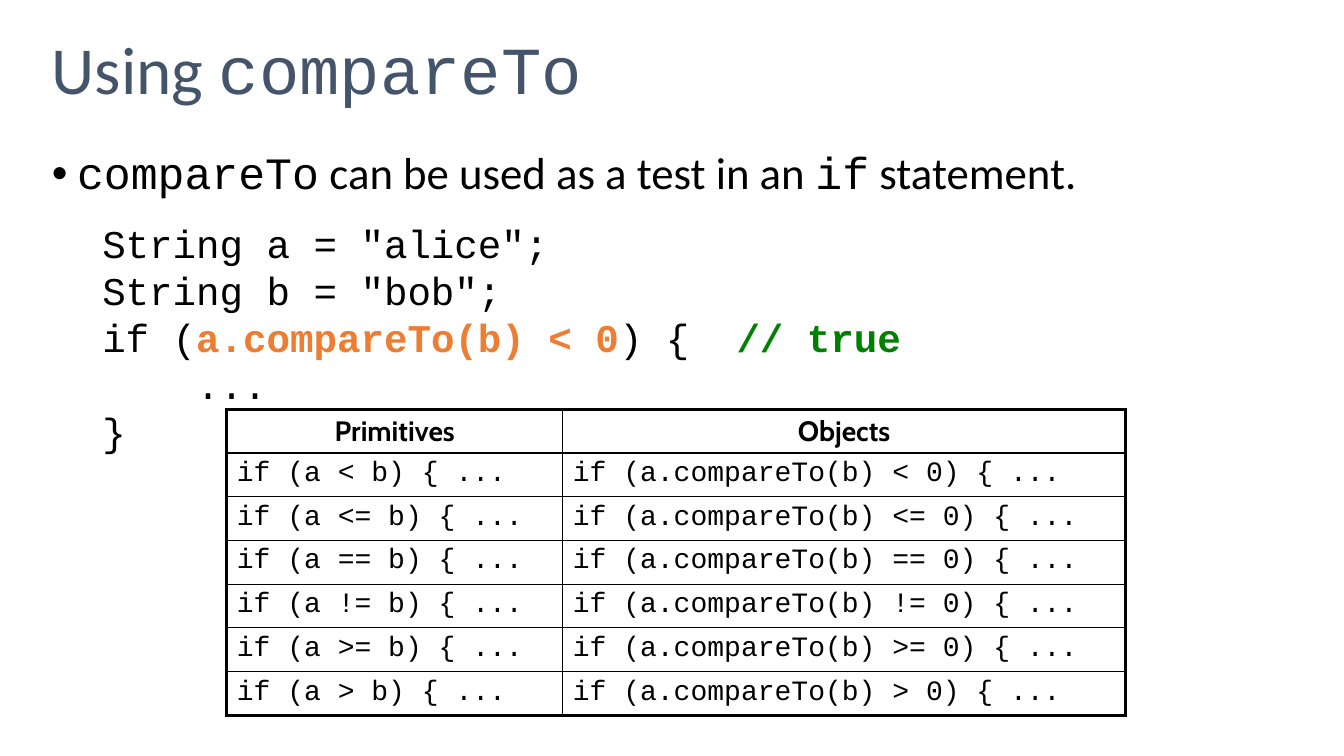
from dataclasses import dataclass

from lxml.etree import SubElement
from pptx import Presentation
from pptx.dml.color import RGBColor
from pptx.enum.text import MSO_ANCHOR, PP_ALIGN
from pptx.oxml.ns import qn
from pptx.util import Pt


@dataclass(frozen=True)
class Theme:
    heading: str = "44546A"
    ink: str = "000000"
    condition: str = "ED7D31"
    remark: str = "008000"
    prose: str = "Calibri"
    code: str = "Courier New"
    header: str = "Cabin"
    title_size: int = 48
    bullet_size: int = 32
    code_size: int = 28
    table_size: int = 20
    outer_line: float = 2.25
    inner_line: float = 1


THEME = Theme()
OPERATORS = ["<", "<=", "==", "!=", ">=", ">"]
CODE_LINES = [
    (0, [('String a = "alice";', THEME.ink)]),
    (0, [('String b = "bob";', THEME.ink)]),
    (0, [("if (", THEME.ink), ("a.compareTo(b) < 0", THEME.condition),
         (") {  ", THEME.ink), ("// true", THEME.remark)]),
    (4, [("...", THEME.ink)]),
    (0, [("}", THEME.ink)]),
]


def add_run(paragraph, text, font, size, color=THEME.ink, bold=False):
    run = paragraph.add_run()
    run.text = text
    run.font.name = font
    run.font.size = Pt(size)
    run.font.bold = bold
    run.font.color.rgb = RGBColor.from_string(color)


def add_text_frame(slide, top, height, anchor):
    frame = slide.shapes.add_textbox(Pt(30), Pt(top), Pt(900), Pt(height)).text_frame
    frame.word_wrap = True
    frame.vertical_anchor = anchor
    return frame


def set_indent(paragraph, margin, first_line=0):
    properties = paragraph._p.get_or_add_pPr()
    properties.set("marL", str(Pt(margin)))
    properties.set("indent", str(Pt(first_line)))
    return properties


def add_title(slide):
    heading = add_text_frame(slide, 0, 104.4, MSO_ANCHOR.MIDDLE).paragraphs[0]
    heading.line_spacing = 0.9
    add_run(heading, "Using ", THEME.prose, THEME.title_size, THEME.heading)
    add_run(heading, "compareTo", THEME.code, THEME.title_size, THEME.heading)


def add_bullet(paragraph):
    paragraph.line_spacing = 0.9
    paragraph.space_before = Pt(10)
    properties = set_indent(paragraph, 18, -18)
    SubElement(properties, qn("a:buFont"), typeface="Arial")
    SubElement(properties, qn("a:buChar"), char="•")
    for text, font in [("compareTo", THEME.code),
                       (" can be used as a test in an ", THEME.prose),
                       ("if", THEME.code), (" statement.", THEME.prose)]:
        add_run(paragraph, text, font, THEME.bullet_size)


def add_code_line(paragraph, indent_chars, pieces, space_before):
    paragraph.line_spacing = 0.8
    paragraph.space_before = Pt(space_before)
    set_indent(paragraph, 36 + indent_chars * 0.6 * THEME.code_size)
    for text, color in pieces:
        add_run(paragraph, text, THEME.code, THEME.code_size, color,
                color != THEME.ink)


def add_body(slide):
    body = add_text_frame(slide, 104.4, 407.5, MSO_ANCHOR.TOP)
    add_bullet(body.paragraphs[0])
    for index, (indent_chars, pieces) in enumerate(CODE_LINES):
        add_code_line(body.add_paragraph(), indent_chars, pieces,
                      6.7 if index else 20.5)


def set_borders(cell, outer_sides):
    properties = cell._tc.get_or_add_tcPr()
    for side in ("L", "R", "T", "B"):
        width = THEME.outer_line if side in outer_sides else THEME.inner_line
        border = SubElement(properties, qn(f"a:ln{side}"), w=str(Pt(width)))
        fill = SubElement(border, qn("a:solidFill"))
        SubElement(fill, qn("a:srgbClr"), val=THEME.ink)


def add_comparison_table(slide):
    rows = [("Primitives", "Objects")] + [
        (f"if (a {operator} b) {{ ...", f"if (a.compareTo(b) {operator} 0) {{ ...")
        for operator in OPERATORS]
    widths = (240, 402)
    row_height = 31.2
    table = slide.shapes.add_table(
        len(rows), len(widths), Pt(162), Pt(292.3),
        Pt(sum(widths)), Pt(row_height * len(rows))).table
    table.first_row = False
    table.horz_banding = False
    for column, width in zip(table.columns, widths):
        column.width = Pt(width)
    for row_index, texts in enumerate(rows):
        table.rows[row_index].height = Pt(row_height)
        is_header = row_index == 0
        for column_index, text in enumerate(texts):
            cell = table.cell(row_index, column_index)
            outer_sides = "LR"[column_index]
            if is_header:
                outer_sides += "T"
            if row_index == len(rows) - 1:
                outer_sides += "B"
            set_borders(cell, outer_sides)
            cell.fill.background()
            paragraph = cell.text_frame.paragraphs[0]
            paragraph.alignment = PP_ALIGN.CENTER if is_header else PP_ALIGN.LEFT
            add_run(paragraph, text, THEME.header if is_header else THEME.code,
                    THEME.table_size, bold=is_header)


def main():
    presentation = Presentation()
    presentation.slide_width = Pt(960)
    presentation.slide_height = Pt(540)
    slide = presentation.slides.add_slide(presentation.slide_layouts[6])
    add_title(slide)
    add_body(slide)
    add_comparison_table(slide)
    presentation.save("out.pptx")


if __name__ == "__main__":
    main()
